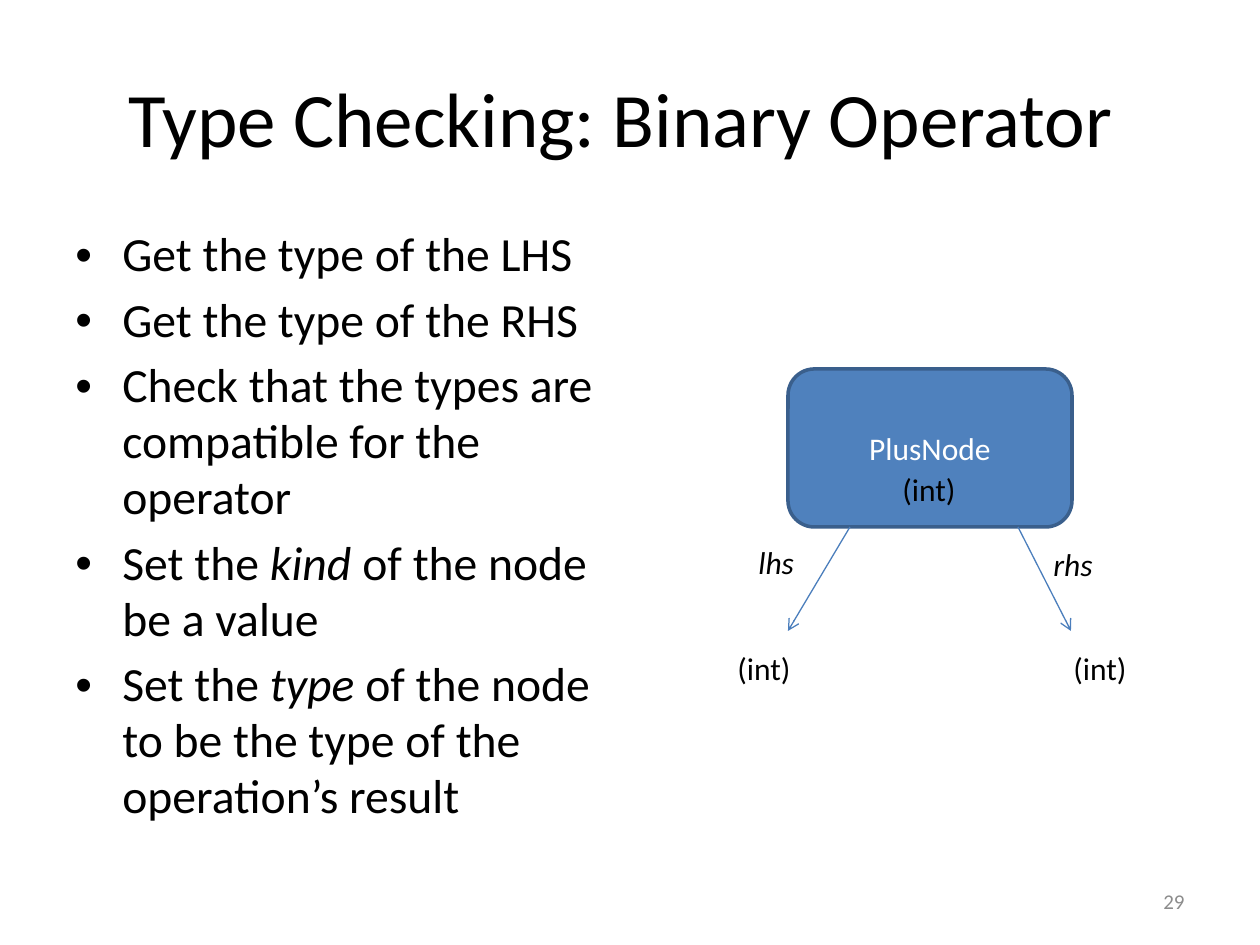
import lxml.etree
import pptx
import pptx.dml.color
import pptx.enum.shapes
import pptx.enum.text
import pptx.oxml.ns
import pptx.util

SCALE = 914400 // 126  # EMU in one px
ALIGN = pptx.enum.text.PP_ALIGN
ANCHOR = pptx.enum.text.MSO_ANCHOR
BLACK, WHITE, GREY = "000000", "FFFFFF", "8C8C8C"
NODE_FILL, NODE_LINE, EDGE_LINE = "4F81BD", "3A5F8C", "4B7EBC"

STEPS = [
    ["Get the type of the LHS"],
    ["Get the type of the RHS"],
    ["Check that the types are compatible for the operator"],
    ["Set the ", "kind ", "of the node be a value"],
    ["Set the ", "type ", "of the node to be the type of the operation’s result"],
]


def px(*lengths):
    return [pptx.util.Emu(length * SCALE) for length in lengths]


def color(value):
    return pptx.dml.color.RGBColor.from_string(value)


def set_all(target, values):
    for name, value in values.items():
        setattr(target, name, value)


def add_child(parent, tag, **attributes):
    name = pptx.oxml.ns.qn(tag)
    return lxml.etree.SubElement(parent, name, attributes)


def write_runs(paragraph, parts, size, ink=BLACK, italic=False):
    """Write the parts as runs; every second part has the other slant."""
    for index, part in enumerate(parts):
        run = paragraph.add_run()
        run.text = part
        slanted = italic != (index % 2 == 1)
        set_all(run.font, {"name": "Calibri", "size": pptx.util.Pt(size),
                           "italic": slanted})
        run.font.color.rgb = color(ink)


def write_line(shape, text, size, ink=BLACK, align=ALIGN.CENTER, italic=False):
    set_all(shape.text_frame, {"word_wrap": True, "vertical_anchor": ANCHOR.MIDDLE})
    paragraph = shape.text_frame.paragraphs[0]
    paragraph.alignment = align
    write_runs(paragraph, [text], size, ink, italic)


def add_title(slide, text, box):
    title = slide.shapes.title
    set_all(title, dict(zip(("left", "top", "width", "height"), px(*box))))
    write_line(title, text, 44)


def add_bullets(slide, items, box):
    frame = slide.shapes.add_textbox(*px(*box)).text_frame
    frame.word_wrap = True
    indent = px(47)[0]
    for index, parts in enumerate(items):
        paragraph = frame.add_paragraph() if index else frame.paragraphs[0]
        set_all(paragraph, {"space_before": pptx.util.Pt(5.4), "line_spacing": 0.98})
        properties = paragraph._p.get_or_add_pPr()
        properties.set("marL", str(indent))
        properties.set("indent", str(-indent))
        add_child(properties, "a:buFont", typeface="Arial")
        add_child(properties, "a:buChar", char="•")
        write_runs(paragraph, parts, 27.2)


def add_node(slide, text, box):
    kind = pptx.enum.shapes.MSO_SHAPE.ROUNDED_RECTANGLE
    node = slide.shapes.add_shape(kind, *px(*box))
    node.shadow.inherit = False
    node.fill.solid()
    node.fill.fore_color.rgb = color(NODE_FILL)
    node.line.color.rgb = color(NODE_LINE)
    node.line.width = pptx.util.Pt(2)
    write_line(node, text, 18, WHITE)


def add_arrow(slide, start, end):
    kind = pptx.enum.shapes.MSO_CONNECTOR.STRAIGHT
    arrow = slide.shapes.add_connector(kind, *px(*start, *end))
    arrow.line.color.rgb = color(EDGE_LINE)
    arrow.line.width = pptx.util.Pt(0.75)
    add_child(arrow.line._get_or_add_ln(), "a:tailEnd", type="arrow")
    add_child(arrow._element.spPr, "a:effectLst")


def add_label(slide, text, left, top, width, italic=False):
    label = slide.shapes.add_textbox(*px(left, top, width, 50))
    write_line(label, text, 18, align=ALIGN.LEFT, italic=italic)
    set_all(label.text_frame, {"word_wrap": False, "vertical_anchor": ANCHOR.TOP})


def main():
    presentation = pptx.Presentation()
    set_all(presentation, dict(zip(("slide_width", "slide_height"), px(1260, 945))))
    slide = presentation.slides.add_slide(presentation.slide_layouts[5])

    # Title and steps; the title's closing space takes part in its centring
    add_title(slide, "Type Checking: Binary Operator ", (63, 38, 1134, 157))
    add_bullets(slide, STEPS, (63, 221, 546, 624))

    # Slide number
    number = slide.shapes.add_textbox(*px(903, 876, 294, 50))
    write_line(number, "29", 12, GREY, ALIGN.RIGHT)

    # Syntax tree
    add_node(slide, "PlusNode", (788, 369, 284, 158))
    add_arrow(slide, (850, 527), (788, 631))
    add_arrow(slide, (1018, 527), (1071, 631))
    for left, top in ((725, 643), (1061, 643), (890, 464)):
        add_label(slide, "(int)", left, top, 79)
    add_label(slide, "lhs", 746, 537, 62, italic=True)
    add_label(slide, "rhs", 1041, 539, 66, italic=True)

    presentation.save("out.pptx")


if __name__ == "__main__":
    main()
